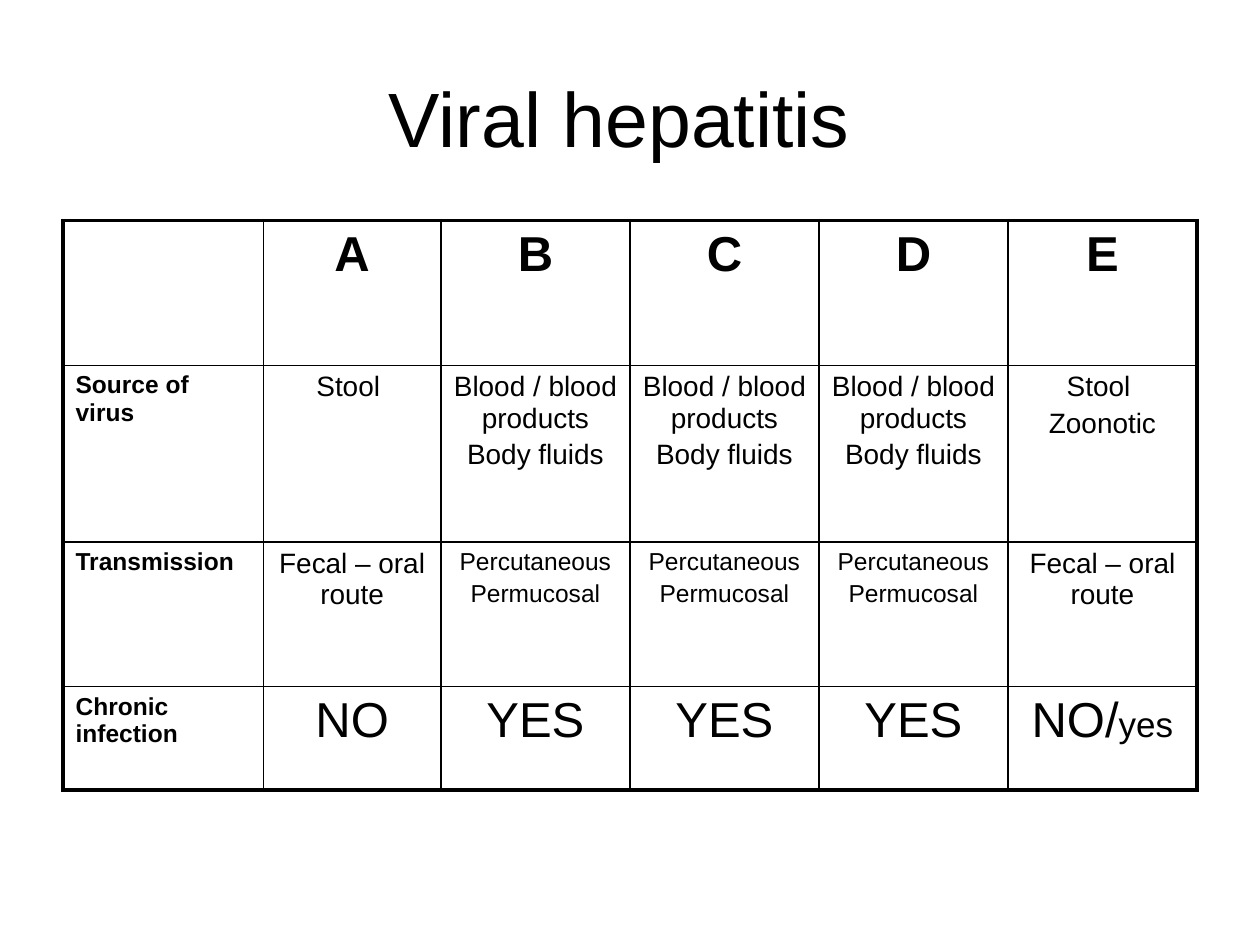
from lxml.etree import SubElement
from pptx import Presentation
from pptx.dml.color import RGBColor
from pptx.enum.text import MSO_ANCHOR, PP_ALIGN
from pptx.oxml.ns import qn
from pptx.util import Inches, Pt

COLORS = {"ink": "000000", "paper": "FFFFFF"}
FONT = "Arial"
TITLE = "Viral hepatitis "

# Each cell lists its paragraphs; each paragraph lists (text, size) runs.
BLOOD = [[("Blood / blood products", 16)], [("Body fluids", 16)]]
CONTACT = [[("Percutaneous", 14)], [("Permucosal", 14)]]
FECAL_ORAL = [[("Fecal – oral route", 16)]]
YES = [[("YES", 28)]]
ROWS = [
    [[]] + [[[(virus, 28)]] for virus in "ABCDE"],
    [[[("Source of virus", 14)]], [[("Stool ", 16)]], BLOOD, BLOOD, BLOOD,
     [[("Stool ", 16)], [("Zoonotic", 16)]]],
    [[[("Transmission", 14)]], FECAL_ORAL, CONTACT, CONTACT, CONTACT, FECAL_ORAL],
    [[[("Chronic infection", 14)]], [[("NO", 28)]], YES, YES, YES,
     [[("NO/", 28), ("yes", 20)]]],
]
COLUMN_WIDTHS = [1.59, 1.41, 1.5, 1.5, 1.5, 1.5]
ROW_HEIGHTS = [1.15, 1.4, 1.15, 0.82]
INNER_LINE, OUTER_LINE = 1, 2.25


def format_run(run, size, bold=False):
    run.font.name = FONT
    run.font.size = Pt(size)
    run.font.bold = bold
    run.font.color.rgb = RGBColor.from_string(COLORS["ink"])


def set_borders(cell, outer_sides):
    """Draw all four borders, thicker on the sides at the table's edge."""
    properties = cell._tc.get_or_add_tcPr()
    for side, is_outer in outer_sides.items():
        width = Pt(OUTER_LINE if is_outer else INNER_LINE)
        line = SubElement(properties, qn(f"a:ln{side}"), w=str(width))
        fill = SubElement(line, qn("a:solidFill"))
        SubElement(fill, qn("a:srgbClr"), val=COLORS["ink"])


def fill_cell(cell, paragraphs, centered, bold):
    text_frame = cell.text_frame
    for index, runs in enumerate(paragraphs):
        paragraph = text_frame.add_paragraph() if index else text_frame.paragraphs[0]
        paragraph.alignment = PP_ALIGN.CENTER if centered else PP_ALIGN.LEFT
        if index:
            paragraph.space_before = Pt(0.2 * runs[0][1])
        for text, size in runs:
            run = paragraph.add_run()
            run.text = text
            format_run(run, size, bold)


def add_title(slide):
    title = slide.shapes.title
    title.left, title.top = Inches(0.5), Inches(0.3)
    title.width, title.height = Inches(9), Inches(1.25)
    title.text_frame.text = TITLE
    title.text_frame.vertical_anchor = MSO_ANCHOR.MIDDLE
    paragraph = title.text_frame.paragraphs[0]
    paragraph.alignment = PP_ALIGN.CENTER
    format_run(paragraph.runs[0], 44)


def add_hepatitis_table(slide):
    last_row, last_column = len(ROWS) - 1, len(COLUMN_WIDTHS) - 1
    table = slide.shapes.add_table(
        len(ROWS), len(COLUMN_WIDTHS), Inches(0.5), Inches(1.75),
        Inches(sum(COLUMN_WIDTHS)), Inches(sum(ROW_HEIGHTS))).table
    table.first_row = table.horz_banding = False
    for column, width in zip(table.columns, COLUMN_WIDTHS):
        column.width = Inches(width)
    for row, height in zip(table.rows, ROW_HEIGHTS):
        row.height = Inches(height)
    for r, row in enumerate(ROWS):
        for c, paragraphs in enumerate(row):
            cell = table.cell(r, c)
            set_borders(cell, {"L": c == 0, "R": c == last_column,
                               "T": r == 0, "B": r == last_row})
            cell.fill.background()
            fill_cell(cell, paragraphs, centered=c > 0, bold=r == 0 or c == 0)


def main():
    presentation = Presentation()
    presentation.slide_width, presentation.slide_height = Inches(10), Inches(7.5)
    slide = presentation.slides.add_slide(presentation.slide_layouts[5])
    slide.background.fill.solid()
    slide.background.fill.fore_color.rgb = RGBColor.from_string(COLORS["paper"])
    add_title(slide)
    add_hepatitis_table(slide)
    presentation.save("out.pptx")


if __name__ == "__main__":
    main()
